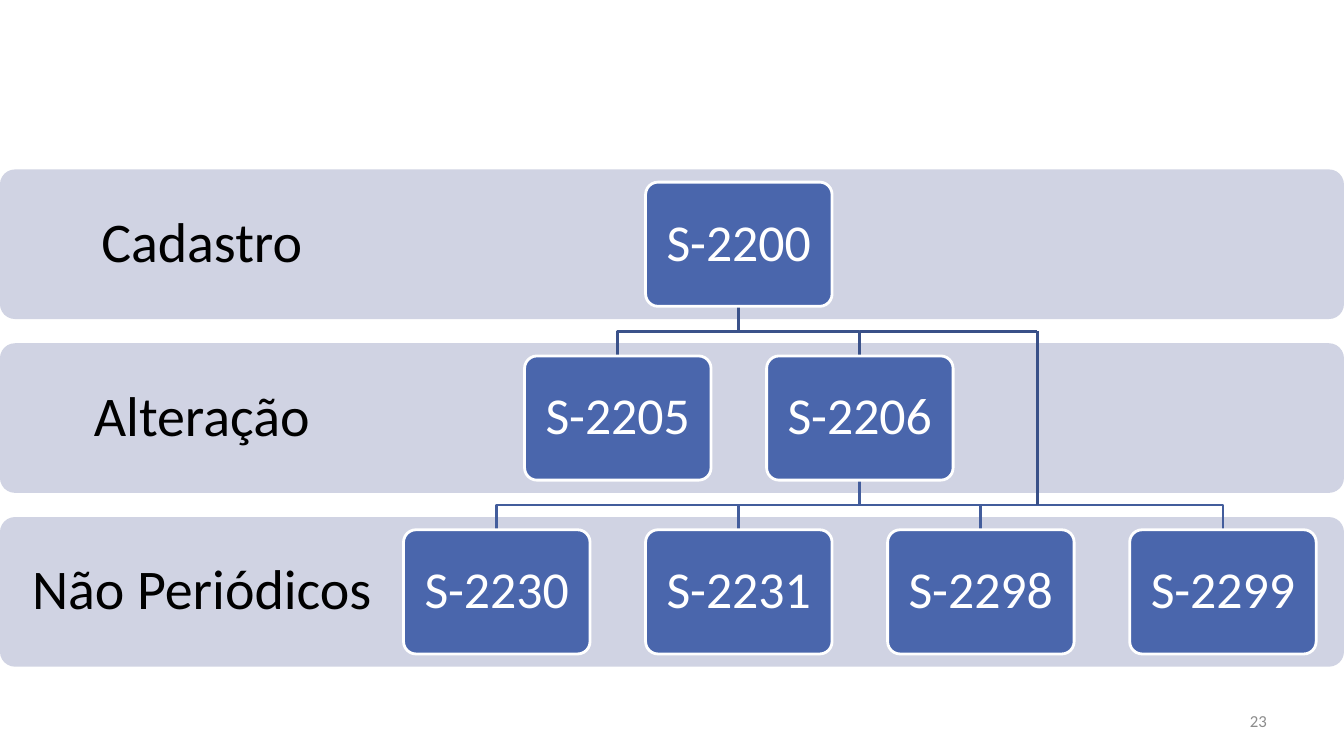
from dataclasses import dataclass

from lxml import etree
from pptx import Presentation
from pptx.dml.color import RGBColor
from pptx.enum.shapes import MSO_CONNECTOR, MSO_SHAPE
from pptx.enum.text import MSO_ANCHOR, PP_ALIGN
from pptx.oxml.ns import qn
from pptx.util import Cm, Pt

ROUNDED = MSO_SHAPE.ROUNDED_RECTANGLE
STRAIGHT = MSO_CONNECTOR.STRAIGHT
MIDDLE = MSO_ANCHOR.MIDDLE
CENTER, RIGHT = PP_ALIGN.CENTER, PP_ALIGN.RIGHT


@dataclass(frozen=True)
class Theme:
    font: str = "Calibri"
    band: str = "D0D3E3"
    box: str = "4A66AC"
    white: str = "FFFFFF"
    black: str = "000000"
    gray: str = "8C8C8C"
    upper_link: str = "3B528A"
    lower_link: str = "435D9C"
    bypass: str = "395088"
    label_size: float = 40
    box_size: float = 37
    number_size: float = 12
    line: float = 2
    bypass_line: float = 2.25


THEME = Theme()

# Lengths in centimetres
SLIDE_W, SLIDE_H = 33.87, 19.05
BAND_TOP, BAND_H, ROW_PITCH = 4.27, 3.77, 4.38
BOX_LEFT, BOX_W, BOX_H, COL_PITCH = 10.17, 4.7, 3.13, 6.1
BOX_INDENT = (BAND_H - BOX_H) / 2
LINK_DROP = (ROW_PITCH - BOX_H) / 2
BYPASS_X = 26.14
CORNER = 0.1

LABELS = ["Cadastro", "Alteração", "Não Periódicos"]
# Event: (row, column), columns counted from the leftmost box
EVENTS = {
    "S-2200": (0, 1),
    "S-2205": (1, 0.5),
    "S-2206": (1, 1.5),
    "S-2230": (2, 0),
    "S-2231": (2, 1),
    "S-2298": (2, 2),
    "S-2299": (2, 3),
}
LINKS = [
    ("S-2200", ["S-2205", "S-2206"], THEME.upper_link),
    ("S-2206", ["S-2230", "S-2231", "S-2298", "S-2299"], THEME.lower_link),
]


def rgb(color):
    return RGBColor.from_string(color)


def box_top(row):
    return BAND_TOP + row * ROW_PITCH + BOX_INDENT


def box_center(column):
    return BOX_LEFT + column * COL_PITCH + BOX_W / 2


def set_text(sp, text, size, color, align=CENTER, margins=(0.25, 0.13, 0.25, 0.13), spacing=0.9):
    """Margins are left, top, right, bottom in centimetres."""
    tf = sp.text_frame
    tf.word_wrap = True
    tf.vertical_anchor = MIDDLE
    tf.margin_left, tf.margin_top, tf.margin_right, tf.margin_bottom = map(Cm, margins)
    p = tf.paragraphs[0]
    p.alignment = align
    p.line_spacing = spacing
    r = p.add_run()
    r.text = text
    r.font.name = THEME.font
    r.font.size = Pt(size)
    r.font.color.rgb = rgb(color)


def set_line(sp, color, width):
    sp.line.color.rgb = rgb(color)
    sp.line.width = Pt(width)


def add_rounded(s, left, top, width, height, fill):
    sp = s.shapes.add_shape(ROUNDED, Cm(left), Cm(top), Cm(width), Cm(height))
    sp.adjustments[0] = CORNER
    sp.shadow.inherit = False
    sp.fill.solid()
    sp.fill.fore_color.rgb = rgb(fill)
    return sp


def add_band(s, row, label):
    sp = add_rounded(s, 0, BAND_TOP + row * ROW_PITCH, SLIDE_W, BAND_H, THEME.band)
    sp.line.fill.background()
    set_text(sp, label, THEME.label_size, THEME.black, margins=(0.65, 0.7, 24.35, 0.7))


def add_event(s, code):
    row, column = EVENTS[code]
    left = box_center(column) - BOX_W / 2
    sp = add_rounded(s, left, box_top(row), BOX_W, BOX_H, THEME.box)
    set_line(sp, THEME.white, THEME.line)
    set_text(sp, code, THEME.box_size, THEME.white, margins=(0.3, 0.4, 0.3, 0.4))


def add_link(s, parent, child, color):
    """Open right-angled path from the bottom of parent to the top of child."""
    row, column = EVENTS[parent]
    x1, x2 = Cm(box_center(column)), Cm(box_center(EVENTS[child][1]))
    y1 = box_top(row) + BOX_H
    middle, y2 = Cm(y1 + LINK_DROP), Cm(y1 + 2 * LINK_DROP)
    builder = s.shapes.build_freeform(x1, Cm(y1))
    builder.add_line_segments([(x1, middle), (x2, middle), (x2, y2)], close=False)
    sp = builder.convert_to_shape()
    sp.shadow.inherit = False
    sp.fill.background()
    set_line(sp, color, THEME.line)


def add_straight(s, x1, y1, x2, y2):
    line = s.shapes.add_connector(STRAIGHT, Cm(x1), Cm(y1), Cm(x2), Cm(y2))
    set_line(line, THEME.bypass, THEME.bypass_line)
    etree.SubElement(line._element.spPr, qn("a:effectLst"))


def add_bypass(s):
    """Line from the S-2206 branch past the second row to the third."""
    start = box_center(EVENTS["S-2206"][1])
    top = box_top(1) - LINK_DROP
    add_straight(s, start, top, BYPASS_X, top)
    add_straight(s, BYPASS_X, top, BYPASS_X, top + ROW_PITCH)


def main():
    prs = Presentation()
    prs.slide_width, prs.slide_height = Cm(SLIDE_W), Cm(SLIDE_H)
    s = prs.slides.add_slide(prs.slide_layouts[6])

    number = s.shapes.add_textbox(Cm(24.28), Cm(17.65), Cm(7.9), Cm(1.02))
    set_text(number, "23", THEME.number_size, THEME.gray, align=RIGHT, spacing=1.0)

    for row, label in enumerate(LABELS):
        add_band(s, row, label)
    for parent, children, color in LINKS:
        for child in children:
            add_link(s, parent, child, color)
    for code in EVENTS:
        add_event(s, code)
    add_bypass(s)

    prs.save("out.pptx")


if __name__ == "__main__":
    main()
